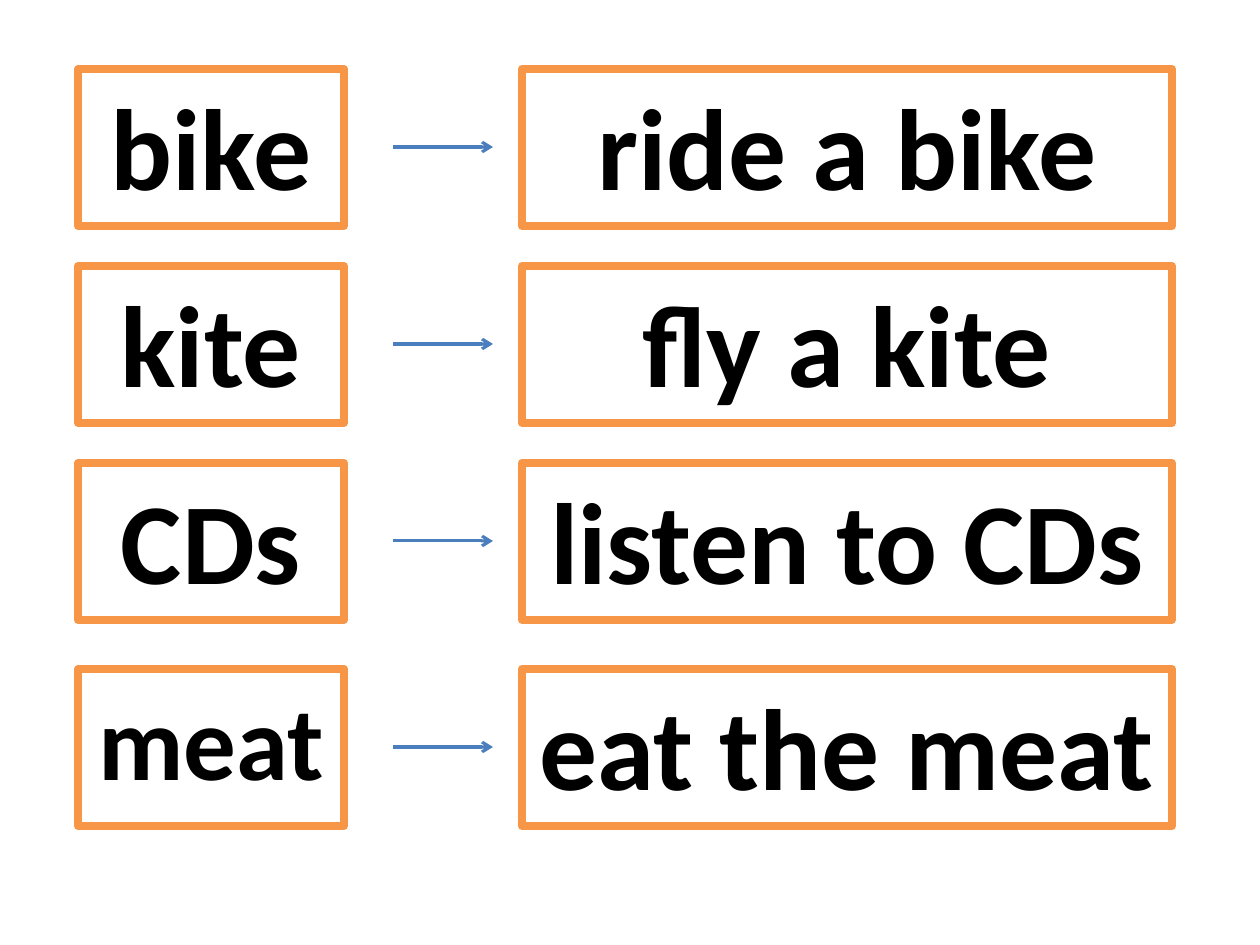
"""Build a slide that pairs single words with the phrases that use them."""
from dataclasses import dataclass

from lxml.etree import SubElement
from pptx import Presentation
from pptx.dml.color import RGBColor
from pptx.enum.shapes import MSO_CONNECTOR as Connector, MSO_SHAPE as Shape
from pptx.enum.text import MSO_ANCHOR as Anchor, PP_ALIGN as Align
from pptx.oxml.ns import qn
from pptx.slide import Slide
from pptx.util import Emu, Pt

PX_PER_INCH = 126
COLORS = {"fill": "FFFFFF", "border": "F79646", "text": "000000", "arrow": "4B7EBC"}
FONT = "Calibri"
WORD_LEFT, WORD_WIDTH = 78, 266
PHRASE_LEFT, PHRASE_WIDTH = 522, 650
ARROW_START, ARROW_END = 393, 493
BOX_HEIGHT = 157


@dataclass(frozen=True)
class Pair:
    word: str
    phrase: str
    top: int
    word_size: int = 66
    phrase_size: int = 66


PAIRS = [
    Pair("bike", "ride a bike", 69),
    Pair("kite", "fly a kite", 266),
    Pair("CDs", "listen to CDs", 463),
    Pair("meat", "eat the meat", 669, word_size=60),
]


def px(length: int) -> Emu:
    return Emu(round(length * 914400 / PX_PER_INCH))


def color(name: str) -> RGBColor:
    return RGBColor.from_string(COLORS[name])


def draw_box(page: Slide, text: str, left: int, top: int, width: int, size: int) -> None:
    box = page.shapes.add_shape(Shape.RECTANGLE, px(left), px(top), px(width), px(BOX_HEIGHT))
    box.shadow.inherit = False
    box.fill.solid()
    box.fill.fore_color.rgb = color("fill")
    box.line.color.rgb = color("border")
    box.line.width = Pt(4.5)
    frame = box.text_frame
    frame.word_wrap = True
    frame.vertical_anchor = Anchor.TOP
    para = frame.paragraphs[0]
    para.alignment = Align.CENTER
    span = para.add_run()
    span.text = text
    span.font.name = FONT
    span.font.size = Pt(size)
    span.font.bold = True
    span.font.color.rgb = color("text")


def draw_arrow(page: Slide, middle: int) -> None:
    arrow = page.shapes.add_connector(
        Connector.STRAIGHT, px(ARROW_START), px(middle), px(ARROW_END), px(middle)
    )
    arrow.line.color.rgb = color("arrow")
    arrow.line.width = Pt(1.75)
    SubElement(arrow.line._get_or_add_ln(), qn("a:tailEnd"), type="arrow")
    SubElement(arrow._element.spPr, qn("a:effectLst"))


def draw_pair(page: Slide, pair: Pair) -> None:
    draw_box(page, pair.word, WORD_LEFT, pair.top, WORD_WIDTH, pair.word_size)
    draw_box(page, pair.phrase, PHRASE_LEFT, pair.top, PHRASE_WIDTH, pair.phrase_size)
    draw_arrow(page, pair.top + BOX_HEIGHT // 2)


def main() -> None:
    deck = Presentation()
    deck.slide_width, deck.slide_height = px(1260), px(945)
    page = deck.slides.add_slide(deck.slide_layouts[6])
    for pair in PAIRS:
        draw_pair(page, pair)
    deck.save("out.pptx")


if __name__ == "__main__":
    main()
